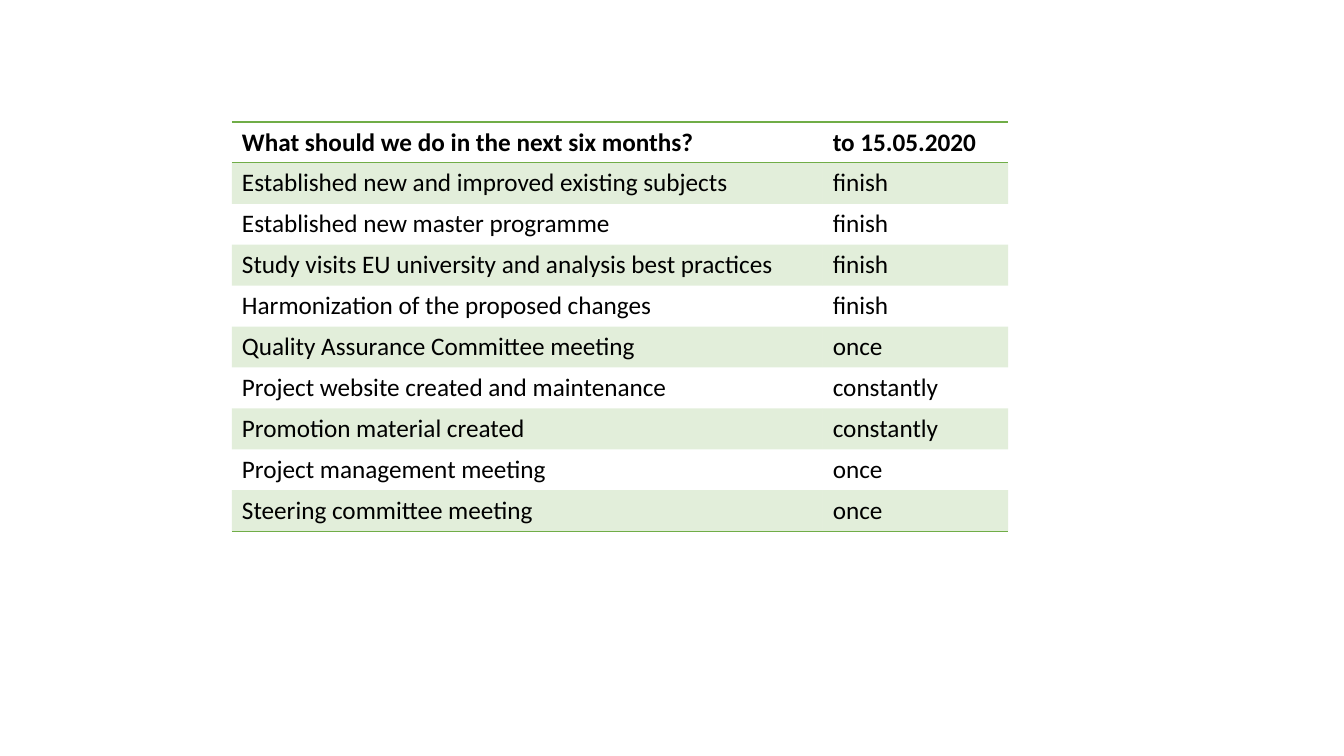
import pptx
import pptx.dml.color
import pptx.oxml
import pptx.oxml.ns
import pptx.util
from pptx.util import Inches

COLORS = {"green": "70AD47", "text": "000000"}
PLAIN_STYLE = "{2D5ABB26-0587-4C30-8999-92F81FD0307C}"
BAND_OPACITY = 20
COLUMN_WIDTHS = (5.86, 1.84)
TABLE_HEIGHT = 4.06
ROWS = [
    ("What should we do in the next six months?", "to 15.05.2020"),
    ("Established new and improved existing subjects", "finish"),
    ("Established new master programme", "finish"),
    ("Study visits EU university and analysis best practices", "finish"),
    ("Harmonization of the proposed changes", "finish"),
    ("Quality Assurance Committee meeting", "once"),
    ("Project website created and maintenance", "constantly"),
    ("Promotion material created", "constantly"),
    ("Project management meeting", "once"),
    ("Steering committee meeting", "once"),
]


def fill_band(cell):
    """Fill a cell with translucent green."""
    cell.fill.solid()
    cell.fill.fore_color.rgb = pptx.dml.color.RGBColor.from_string(COLORS["green"])
    color = cell._tc.tcPr.find(".//" + pptx.oxml.ns.qn("a:srgbClr"))
    color.append(pptx.oxml.parse_xml(
        f'<a:alpha {pptx.oxml.ns.nsdecls("a")} val="{BAND_OPACITY * 1000}"/>'))


def add_borders(cell, sides):
    """Draw green borders on the given sides, listed in schema order."""
    properties = cell._tc.get_or_add_tcPr()
    for position, side in enumerate(sides):
        properties.insert(position, pptx.oxml.parse_xml(
            f'<a:ln{side} {pptx.oxml.ns.nsdecls("a")} w="{pptx.util.Pt(1)}">'
            f'<a:solidFill><a:srgbClr val="{COLORS["green"]}"/></a:solidFill>'
            f'</a:ln{side}>'))


def write_cell(cell, text, bold):
    """Write text into a cell."""
    cell.text = text
    font = cell.text_frame.paragraphs[0].font
    font.name = "Calibri"
    font.size = pptx.util.Pt(18)
    font.bold = bold
    font.color.rgb = pptx.dml.color.RGBColor.from_string(COLORS["text"])


def add_plan_table(slide):
    """Add the table of tasks and deadlines."""
    frame = slide.shapes.add_table(
        len(ROWS), len(COLUMN_WIDTHS), Inches(2.3), Inches(1.21),
        Inches(sum(COLUMN_WIDTHS)), Inches(TABLE_HEIGHT))
    table = frame.table
    table.horz_banding = False
    table._tbl.tblPr.find(pptx.oxml.ns.qn("a:tableStyleId")).text = PLAIN_STYLE
    for column, width in zip(table.columns, COLUMN_WIDTHS):
        column.width = Inches(width)
    for row_index, texts in enumerate(ROWS):
        for column_index, text in enumerate(texts):
            cell = table.cell(row_index, column_index)
            write_cell(cell, text, bold=row_index == 0)
            if row_index % 2:
                fill_band(cell)
            else:
                cell.fill.background()
            if row_index == 0:
                add_borders(cell, "TB")
            elif row_index == len(ROWS) - 1:
                add_borders(cell, "B")


def main():
    """Build and save the presentation."""
    presentation = pptx.Presentation()
    presentation.slide_width = Inches(13.33)
    presentation.slide_height = Inches(7.5)
    slide = presentation.slides.add_slide(presentation.slide_layouts[6])
    add_plan_table(slide)
    presentation.save("out.pptx")


if __name__ == "__main__":
    main()
